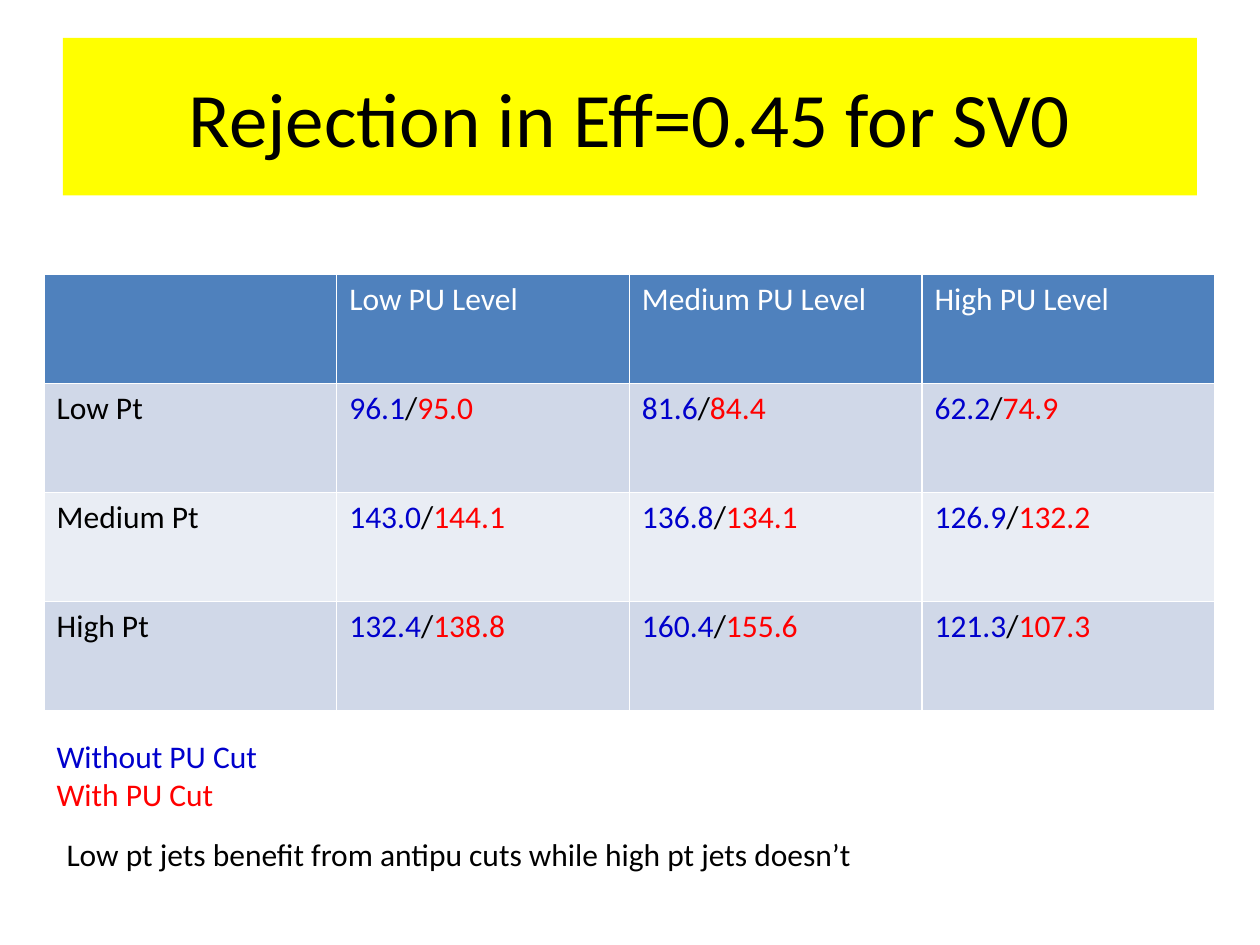
import pptx
import pptx.util
import pptx.dml.color
import pptx.enum.shapes
import pptx.enum.text

Inches = pptx.util.Inches
BLACK, WHITE, BLUE, RED = "000000", "FFFFFF", "0000CC", "FF0000"


def rgb(value):
    return pptx.dml.color.RGBColor.from_string(value)


def add_run(p, text, color, size=18):
    r = p.add_run()
    r.text = text
    r.font.name = "Calibri"
    r.font.size = pptx.util.Pt(size)
    r.font.bold = False
    r.font.color.rgb = rgb(color)


prs = pptx.Presentation()
prs.slide_width = Inches(10)
prs.slide_height = Inches(7.5)
s = prs.slides.add_slide(prs.slide_layouts[6])

title = s.shapes.add_shape(pptx.enum.shapes.MSO_SHAPE.RECTANGLE,
                           Inches(0.5), Inches(0.3), Inches(9), Inches(1.25))
title.shadow.inherit = False
title.fill.solid()
title.fill.fore_color.rgb = rgb("FFFF00")
title.line.fill.background()
tf = title.text_frame
tf.word_wrap = True
tf.vertical_anchor = pptx.enum.text.MSO_ANCHOR.MIDDLE
p = tf.paragraphs[0]
p.alignment = pptx.enum.text.PP_ALIGN.CENTER
add_run(p, "Rejection in Eff=0.45 for SV0", BLACK, 44)

rows = [
    ["", "Low PU Level", "Medium PU Level", "High PU Level"],
    ["Low Pt", ("96.1", "95.0"), ("81.6", "84.4"), ("62.2", "74.9")],
    ["Medium Pt", ("143.0", "144.1"), ("136.8", "134.1"), ("126.9", "132.2")],
    ["High Pt", ("132.4", "138.8"), ("160.4", "155.6"), ("121.3", "107.3")],
]
row_fills = ["4F81BD", "D0D8E8", "E9EDF4", "D0D8E8"]
table = s.shapes.add_table(4, 4, Inches(0.35), Inches(2.18),
                           Inches(9.29), Inches(3.46)).table
for i, row in enumerate(rows):
    for j, value in enumerate(row):
        cell = table.cell(i, j)
        cell.fill.solid()
        cell.fill.fore_color.rgb = rgb(row_fills[i])
        p = cell.text_frame.paragraphs[0]
        if isinstance(value, tuple):
            without_cut, with_cut = value
            add_run(p, without_cut, BLUE)
            add_run(p, "/", BLACK)
            add_run(p, with_cut, RED)
        elif value:
            add_run(p, value, WHITE if i == 0 else BLACK)

notes = [
    (0.35, 5.8, 8.58, 0.71, [("Without PU Cut", BLUE), ("With PU Cut", RED)]),
    (0.43, 6.58, 8.43, 0.4,
     [("Low pt jets benefit from antipu cuts while high pt jets doesn’t", BLACK)]),
]
for left, top, width, height, lines in notes:
    sp = s.shapes.add_textbox(Inches(left), Inches(top), Inches(width), Inches(height))
    tf = sp.text_frame
    tf.word_wrap = True
    tf.auto_size = pptx.enum.text.MSO_AUTO_SIZE.SHAPE_TO_FIT_TEXT
    for k, (text, color) in enumerate(lines):
        p = tf.add_paragraph() if k else tf.paragraphs[0]
        add_run(p, text, color)

prs.save("out.pptx")
